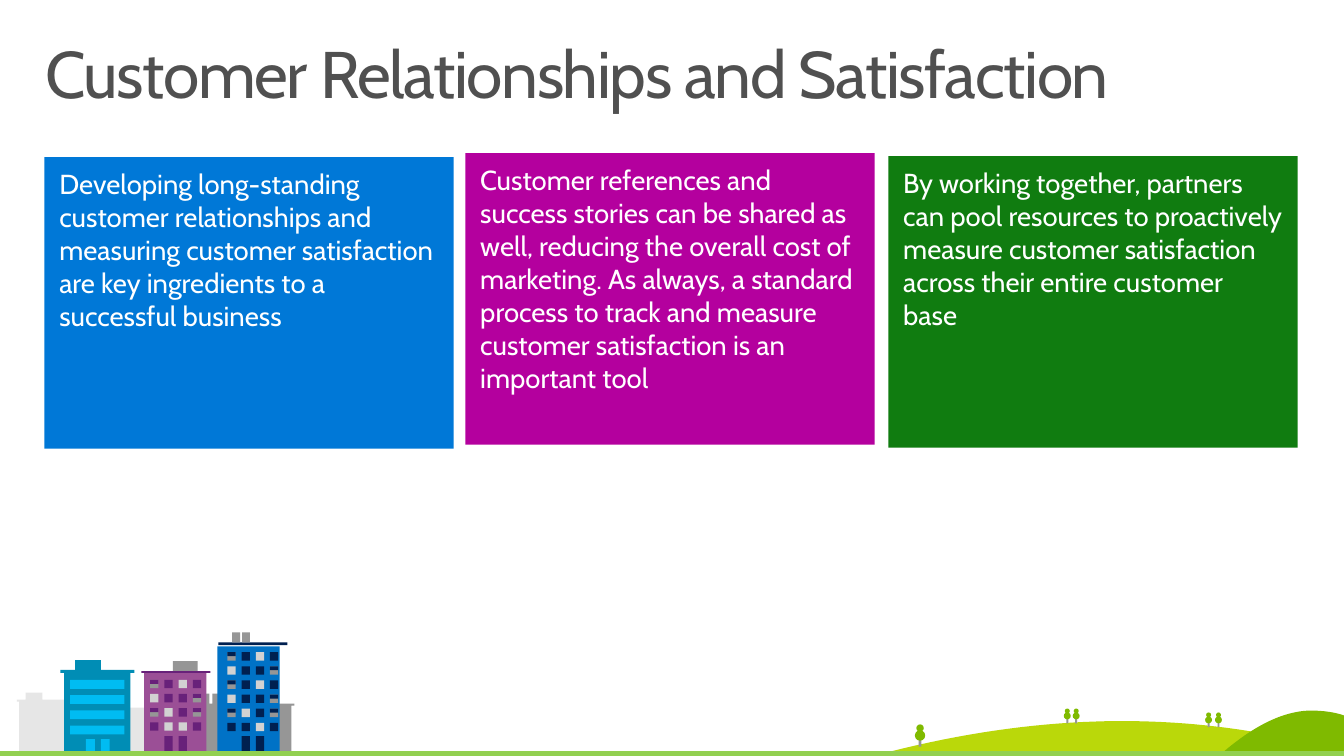
"""Builds the customer relationships slide on a grid of 1360 columns by 765 rows."""
from pptx import Presentation
from pptx import util as u
from pptx.dml.color import RGBColor
from pptx.enum import shapes, text

CELL = u.Inches(0.01)
FONT = "Cabin"
RECT = shapes.MSO_SHAPE.RECTANGLE
OVAL = shapes.MSO_SHAPE.OVAL
HUES = {
    "ink": "505050", "white": "FFFFFF", "blue": "0078D7", "pink": "B4009E",
    "green": "107C10", "mist": "E6E6E6", "teal": "008DB5", "sky": "00BCF2",
    "grey": "969696", "pale": "D2D2D2", "plum": "9B4F96", "grape": "68217A",
    "cobalt": "0072C6", "navy": "002050", "lime": "BAD80A", "leaf": "7FBA00",
    "grass": "92D050",
}
CARDS = [
    (45, 159, "blue", "Developing long-standing customer relationships and measuring "
     "customer satisfaction are key ingredients to a successful business"),
    (471, 155, "pink", "Customer references and success stories can be shared as well, "
     "reducing the overall cost of marketing. As always, a standard process to track "
     "and measure customer satisfaction is an important tool"),
    (899, 158, "green", "By working together, partners can pool resources to proactively "
     "measure customer satisfaction across their entire customer base"),
]


def cells(*spans):
    """Turn grid cells into slide lengths."""
    return [round(n * CELL) for n in spans]


def tint(shape, hue):
    """Give a shape a plain fill with no line or shadow."""
    shape.shadow.inherit = False
    shape.fill.solid()
    shape.fill.fore_color.rgb = RGBColor.from_string(HUES[hue])
    shape.line.fill.background()
    return shape


def block(tree, x, y, w, h, hue, kind=RECT):
    """Add a filled preset shape."""
    return tint(tree.add_shape(kind, *cells(x, y, w, h)), hue)


def outline(tree, spots, hue):
    """Add a filled shape through the given grid spots."""
    spots = [cells(*spot) for spot in spots]
    pen = tree.build_freeform(*spots[0])
    pen.add_line_segments(spots[1:], close=True)
    return tint(pen.convert_to_shape(), hue)


def curve(a, b, c, d, steps=40):
    """List the spots along a cubic curve."""
    marks = [n / steps for n in range(steps + 1)]
    return [tuple((1 - t) ** 3 * p + 3 * t * (1 - t) ** 2 * q + 3 * t * t * (1 - t) * r
                  + t ** 3 * s for p, q, r, s in zip(a, b, c, d)) for t in marks]


def write(shape, words, size, hue, pad):
    """Put left-aligned words at the top of a shape."""
    frame = shape.text_frame
    frame.word_wrap = True
    frame.vertical_anchor = text.MSO_ANCHOR.TOP
    frame.margin_left = frame.margin_right = u.Inches(pad)
    frame.margin_top = frame.margin_bottom = u.Inches(0.1)
    frame.text = words
    para = frame.paragraphs[0]
    para.alignment = text.PP_ALIGN.LEFT
    font = para.runs[0].font
    font.name, font.size = FONT, u.Pt(size)
    font.color.rgb = RGBColor.from_string(HUES[hue])
    return para


def title(tree, words):
    """Add the slide title."""
    para = write(tree.add_textbox(*cells(30, 32, 1300, 100)), words, 48, "ink", 0.16)
    para.line_spacing = 0.9
    para.runs[0].font._element.set("spc", "-100")


def house(tree, x, w, eave, base, top, stacks, rim, hue):
    """Add a building outline with eaves and roof stacks."""
    side, lip = rim
    spots = [(x, eave)]
    for a, b in stacks:
        spots += [(x + a, eave), (x + a, top), (x + b, top), (x + b, eave)]
    end, low = x + w, eave + lip
    spots += [(end, eave), (end, low), (end - side, low), (end - side, base),
              (x + side, base), (x + side, low), (x, low)]
    outline(tree, spots, hue)


def panes(tree, x, y, rows, dark):
    """Add windows: D dark, L light, H half shaded."""
    for j, row in enumerate(rows):
        for i, code in enumerate(row):
            spot = x + 14.4 * i, y + 14.3 * j
            hue = {"D": dark, "L": "pale", "H": "grey"}[code]
            block(tree, *spot, 8.4, 8.5, hue)
            if code == "H":
                block(tree, *spot, 8.4, 4, dark)
    for i in (1, 2):
        block(tree, x + 14.4 * i, 745, 8.4, 16, dark)


def town(tree):
    """Add the row of city buildings."""
    house(tree, 17, 80, 708, 765, 701, [(9, 26)], (2.5, 2), "mist")
    house(tree, 106, 69, 716, 765, 710, [(8, 23)], (2, 2), "mist")
    house(tree, 61, 75, 678, 765, 668, [(15, 41)], (4, 3), "teal")
    for x in (87, 102):
        block(tree, x, 748, 9, 17, "sky")
    for j in range(4):
        block(tree, 71, 688 + 15.4 * j, 55, 9, "sky")
    for x in (191, 228):
        house(tree, x, 70, 712, 761, 702, [(14, 21), (24, 32)], (3, 2), "grey")
    block(tree, 146, 681, 63, 80, "plum")
    block(tree, 143, 679, 70, 2, "grape")
    block(tree, 175, 669, 25, 10, "grey")
    panes(tree, 152, 688, ["HDLD", "LDDH", "HLDH", "DLLD"], "grape")
    block(tree, 220, 654, 63, 108, "cobalt")
    block(tree, 221, 650, 70, 3, "navy")
    for x in (235, 245):
        block(tree, x, 640, 8, 10, "grey")
    panes(tree, 230, 660, ["HDLD", "LDDH", "HDLD", "LDDH", "HLDH", "DDLD"], "navy")


def plant(tree, mid, top, size=1):
    """Add a small round tree."""
    parts = [(9, 2, 6, "grey", RECT), (4, 7, 7, "leaf", OVAL), (0, 5, 5, "leaf", OVAL)]
    for drop, w, h, hue, kind in parts:
        w, h = w * size, h * size
        block(tree, mid - w / 2, top + drop * size, w, h, hue, kind)


def hills(tree):
    """Add the two hills, the trees and the strip of grass."""
    far = curve((899, 761), (1088, 713), (1235, 726), (1360, 761))
    outline(tree, far, "lime")
    near = curve((1239, 760), (1271, 733), (1299, 720), (1325, 719))
    near += curve((1325, 719), (1336, 719), (1347, 720), (1357, 723))
    outline(tree, near + [(1360, 724), (1360, 760)], "leaf")
    for mid, top in ((1080, 717), (1089, 717), (1223, 721), (1233, 721)):
        plant(tree, mid, top)
    plant(tree, 931, 733, 1.5)
    block(tree, 0, 760, 1360, 5, "grass")


def main():
    """Build and save the slide."""
    deck = Presentation()
    deck.slide_width, deck.slide_height = cells(1360, 765)
    tree = deck.slides.add_slide(deck.slide_layouts[6]).shapes
    town(tree.add_group_shape().shapes)
    title(tree, "Customer Relationships and Satisfaction")
    hills(tree.add_group_shape().shapes)
    for x, y, hue, words in CARDS:
        write(block(tree, x, y, 414, 295, hue), words, 20, "white", 0.15)
    deck.save("out.pptx")


if __name__ == "__main__":
    main()
